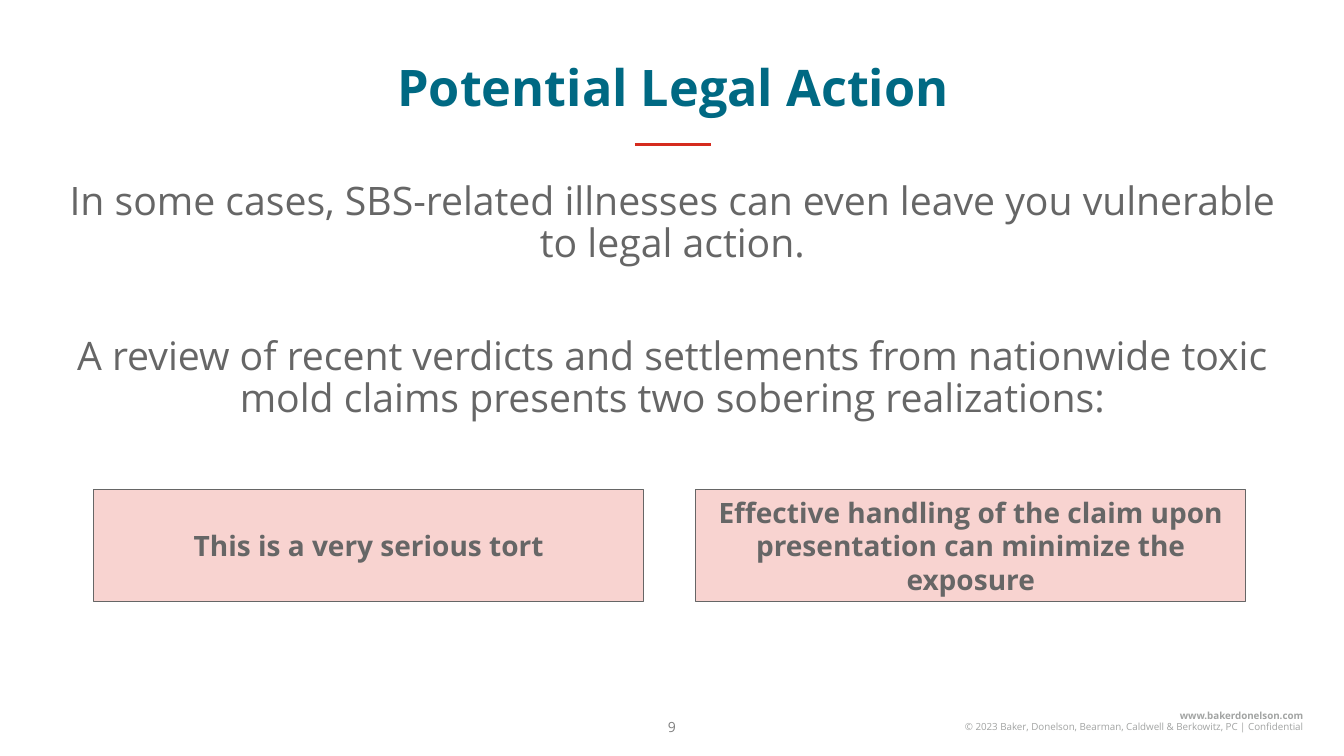
from dataclasses import dataclass

from lxml import etree
from pptx import Presentation
from pptx.dml.color import RGBColor
from pptx.enum.shapes import MSO_CONNECTOR, MSO_SHAPE
from pptx.enum.text import MSO_ANCHOR, PP_ALIGN
from pptx.oxml.ns import qn
from pptx.util import Cm, Pt

CENTER, RIGHT = PP_ALIGN.CENTER, PP_ALIGN.RIGHT
TOP, MIDDLE = MSO_ANCHOR.TOP, MSO_ANCHOR.MIDDLE
RECTANGLE = MSO_SHAPE.RECTANGLE
STRAIGHT = MSO_CONNECTOR.STRAIGHT


@dataclass(frozen=True)
class Theme:
    font: str = "Open Sans"
    heading: str = "006983"
    body: str = "666666"
    accent: str = "D52B1E"
    card: str = "F8D3D0"
    footer: str = "A2A4A3"
    page: str = "7F7F7F"
    heading_size: float = 36
    body_size: float = 28
    card_size: float = 20
    page_size: float = 10
    footer_size: float = 7


def write(paragraph, text, *, font, size, color, bold=False, align=CENTER,
          spacing=None, before=0):
    paragraph.alignment = align
    paragraph.space_before = Pt(before)
    if spacing:
        paragraph.line_spacing = spacing
    run = paragraph.add_run()
    run.text = text
    run.font.name = font
    run.font.size = Pt(size)
    run.font.bold = bold
    run.font.color.rgb = RGBColor.from_string(color)


class SlideBuilder:
    def __init__(self, slide, theme):
        self.slide = slide
        self.theme = theme

    def fill_text(self, shape, lines, anchor):
        """Write (text, format) pairs into a shape, one paragraph each."""
        frame = shape.text_frame
        frame.word_wrap = True
        frame.vertical_anchor = anchor
        for index, (text, style) in enumerate(lines):
            paragraph = frame.add_paragraph() if index else frame.paragraphs[0]
            write(paragraph, text, font=self.theme.font, **style)

    def text(self, box, lines, anchor=TOP):
        area = self.slide.shapes.add_textbox(*map(Cm, box))
        self.fill_text(area, lines, anchor)

    def card(self, box, text):
        card = self.slide.shapes.add_shape(RECTANGLE, *map(Cm, box))
        card.shadow.inherit = False
        card.fill.solid()
        card.fill.fore_color.rgb = RGBColor.from_string(self.theme.card)
        card.line.color.rgb = RGBColor.from_string(self.theme.body)
        card.line.width = Pt(0.75)
        style = dict(size=self.theme.card_size, color=self.theme.body, bold=True)
        self.fill_text(card, [(text, style)], MIDDLE)

    def rule(self, left, right, y):
        rule = self.slide.shapes.add_connector(
            STRAIGHT, Cm(left), Cm(y), Cm(right), Cm(y))
        rule.line.color.rgb = RGBColor.from_string(self.theme.accent)
        rule.line.width = Pt(1.5)
        etree.SubElement(rule.element.spPr, qn("a:effectLst"))


def main():
    presentation = Presentation()
    presentation.slide_width = Cm(33.87)
    presentation.slide_height = Cm(19.05)
    slide = presentation.slides.add_slide(presentation.slide_layouts[6])
    theme = Theme()
    builder = SlideBuilder(slide, theme)

    heading = dict(size=theme.heading_size, color=theme.heading, bold=True)
    builder.text((1.09, 1.04, 31.75, 2.29),
                 [("Potential Legal Action", heading)], MIDDLE)
    builder.rule(16, 17.91, 3.64)

    body = dict(size=theme.body_size, color=theme.body, spacing=0.9)
    builder.text((1.07, 4.45, 31.75, 12.6), [
        ("In some cases, SBS-related illnesses can even leave you vulnerable "
         "to legal action.", body),
        ("A review of recent verdicts and settlements from nationwide toxic "
         "mold claims presents two sobering realizations:",
         dict(body, before=50)),
    ])

    realizations = (
        "This is a very serious tort",
        "Effective handling of the claim upon presentation can minimize "
        "the exposure",
    )
    card_left, card_width, card_gap = 2.36, 13.87, 1.3
    for index, realization in enumerate(realizations):
        left = card_left + index * (card_width + card_gap)
        builder.card((left, 12.34, card_width, 2.82), realization)

    page = dict(size=theme.page_size, color=theme.page)
    builder.text((14.61, 17.98, 4.65, 0.69), [("9", page)])

    footer = dict(size=theme.footer_size, color=theme.footer, align=RIGHT)
    builder.text((20.57, 17.75, 12.52, 0.86), [
        ("www.bakerdonelson.com", dict(footer, bold=True)),
        ("© 2023 Baker, Donelson, Bearman, Caldwell & Berkowitz, PC | "
         "Confidential", footer),
    ])

    presentation.save("out.pptx")


if __name__ == "__main__":
    main()
